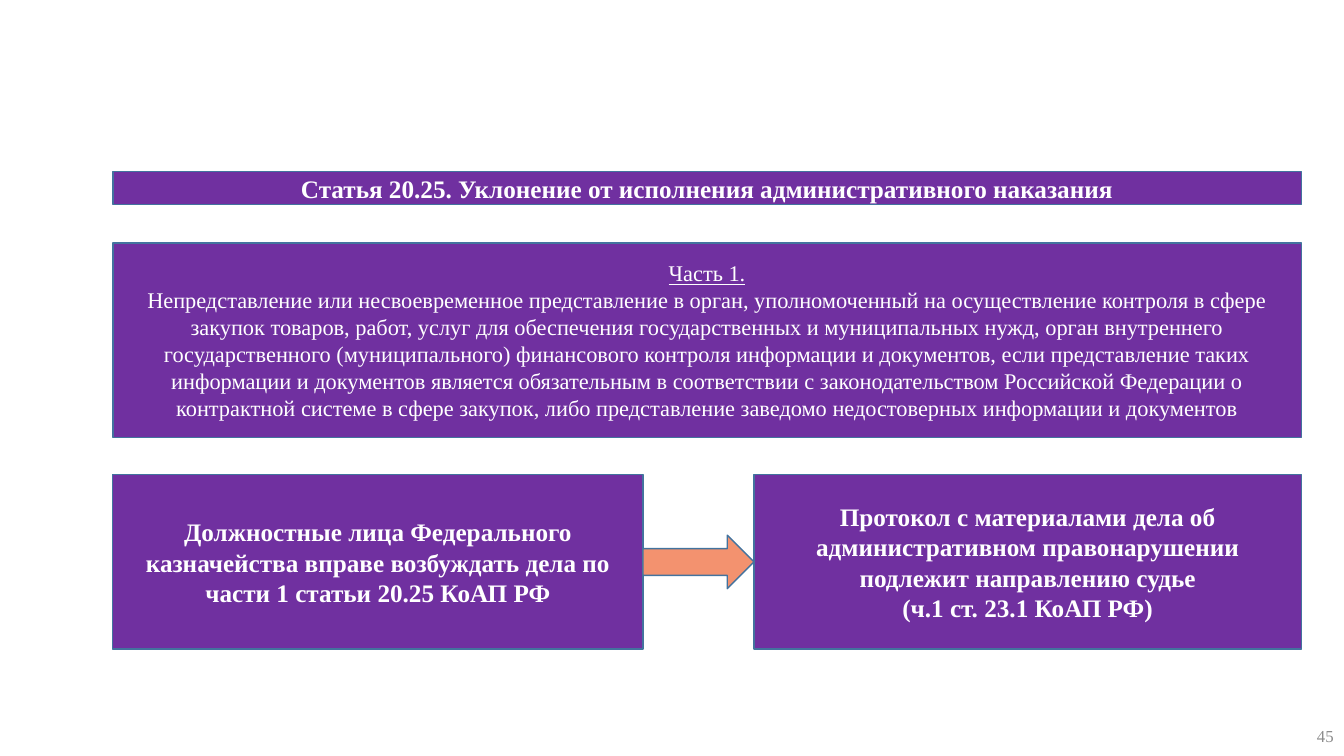
import dataclasses

import pptx
import pptx.dml.color
import pptx.enum.shapes
import pptx.enum.text
import pptx.util

Pt = pptx.util.Pt
Align = pptx.enum.text.PP_ALIGN
Kind = pptx.enum.shapes.MSO_SHAPE

FONT = "Times New Roman"
PURPLE, ORANGE, EDGE = "7030A0", "F3926F", "43739E"
WHITE, GREY = "FFFFFF", "8C8C8C"

# Page grid, in points
LEFT, RIGHT = 80.6, 929.5
WIDE = RIGHT - LEFT
ROW, TALL = 339.1, 124.6
PART_W, NEXT_X = 378.7, 538.6
ARROW_H = 38.2


@dataclasses.dataclass
class Box:
    x: float
    y: float
    w: float
    h: float
    text: str
    size: float = 18
    bold: bool = True


TITLE = Box(LEFT, 122.4, WIDE, 23.8,
            "Статья 20.25. Уклонение от исполнения административного наказания")
PART = Box(
    LEFT, 173.5, WIDE, 139,
    "Часть 1.\n"
    "Непредставление или несвоевременное представление в орган, "
    "уполномоченный на осуществление контроля в сфере закупок товаров, "
    "работ, услуг для обеспечения государственных и муниципальных нужд, "
    "орган внутреннего государственного (муниципального) финансового "
    "контроля информации и документов, если представление таких информации "
    "и документов является обязательным в соответствии с законодательством "
    "Российской Федерации о контрактной системе в сфере закупок, либо "
    "представление заведомо недостоверных информации и документов",
    16, False)
STAFF = Box(LEFT, ROW, PART_W, TALL,
            "Должностные лица Федерального казначейства вправе возбуждать "
            "дела по части 1 статьи 20.25 КоАП РФ")
COURT = Box(NEXT_X, ROW, RIGHT - NEXT_X, TALL,
            "Протокол с материалами дела об административном правонарушении "
            "подлежит направлению судье\n(ч.1 ст. 23.1 КоАП РФ)")
PAGE = Box(743.8, 511.2, 216, 28.8, "45", 12, False)


def color(code: str) -> pptx.dml.color.RGBColor:
    return pptx.dml.color.RGBColor.from_string(code)


def paint(shape, fill: str) -> None:
    shape.fill.solid()
    shape.fill.fore_color.rgb = color(fill)
    shape.line.color.rgb = color(EDGE)
    shape.line.width = Pt(1)


def write(shape, box: Box, ink: str, align: Align) -> None:
    frame = shape.text_frame
    frame.text = box.text
    frame.word_wrap = True
    frame.auto_size = pptx.enum.text.MSO_AUTO_SIZE.NONE
    frame.vertical_anchor = pptx.enum.text.MSO_ANCHOR.MIDDLE
    for para in frame.paragraphs:
        para.alignment = align
        for run in para.runs:
            run.font.name = FONT
            run.font.size = Pt(box.size)
            run.font.bold = box.bold
            run.font.color.rgb = color(ink)


def add_shape(slide, kind: Kind, x: float, y: float, w: float, h: float,
              fill: str):
    shape = slide.shapes.add_shape(kind, Pt(x), Pt(y), Pt(w), Pt(h))
    shape.shadow.inherit = False
    paint(shape, fill)
    return shape


def add_box(slide, box: Box):
    shape = add_shape(slide, Kind.RECTANGLE, box.x, box.y, box.w, box.h, PURPLE)
    write(shape, box, WHITE, Align.CENTER)
    return shape


def main() -> None:
    deck = pptx.Presentation()
    deck.slide_width, deck.slide_height = Pt(960), Pt(540)
    slide = deck.slides.add_slide(deck.slide_layouts[5])

    # Title bar
    title = slide.shapes.title
    title.left, title.top = Pt(TITLE.x), Pt(TITLE.y)
    title.width, title.height = Pt(TITLE.w), Pt(TITLE.h)
    paint(title, PURPLE)
    write(title, TITLE, WHITE, Align.CENTER)

    # Text of the article, with its heading underlined
    part = add_box(slide, PART)
    part.text_frame.paragraphs[0].runs[0].font.underline = True

    # Two steps and the arrow between them
    for step in (STAFF, COURT):
        add_box(slide, step)
    start = LEFT + PART_W
    add_shape(slide, Kind.RIGHT_ARROW, start, ROW + (TALL - ARROW_H) / 2,
              NEXT_X - start, ARROW_H, ORANGE)

    # Page number
    page = slide.shapes.add_textbox(Pt(PAGE.x), Pt(PAGE.y), Pt(PAGE.w), Pt(PAGE.h))
    write(page, PAGE, GREY, Align.RIGHT)

    deck.save("out.pptx")


if __name__ == "__main__":
    main()
